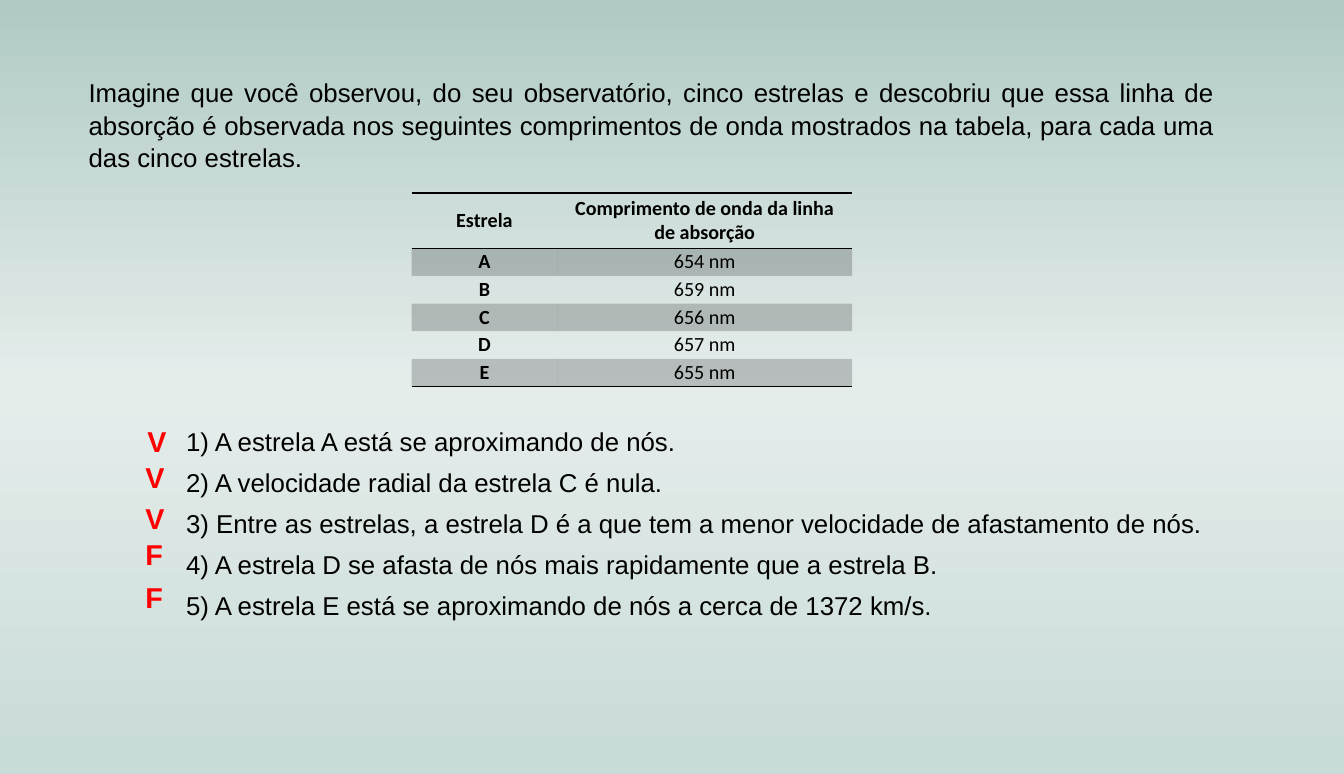
from copy import deepcopy

from lxml.etree import SubElement
from pptx import Presentation
from pptx.dml.color import RGBColor
from pptx.enum.text import MSO_ANCHOR, PP_ALIGN
from pptx.oxml import parse_xml
from pptx.oxml.ns import nsdecls, qn
from pptx.util import Cm, Pt

BLACK = RGBColor(0x00, 0x00, 0x00)
RED = RGBColor(0xFF, 0x00, 0x00)
GRADIENT = [
    (0, RGBColor(0xB0, 0xCA, 0xC4)),
    (0.5, RGBColor(0xE5, 0xED, 0xEB)),
    (0.98, RGBColor(0xCA, 0xDC, 0xD8)),
]
NO_TABLE_STYLE = "{2D5ABB26-0587-4C30-8999-92F81FD0307C}"

INTRO = (
    "Imagine que você observou, do seu observatório, cinco estrelas e descobriu "
    "que essa linha de absorção é observada nos seguintes comprimentos de onda "
    "mostrados na tabela, para cada uma das cinco estrelas."
)
WAVELENGTHS = [
    ("Estrela", "Comprimento de onda da linha de absorção"),
    ("A", "654 nm"),
    ("B", "659 nm"),
    ("C", "656 nm"),
    ("D", "657 nm"),
    ("E", "655 nm"),
]
STATEMENTS = [
    "1) A estrela A está se aproximando de nós.",
    "2) A velocidade radial da estrela C é nula.",
    "3) Entre as estrelas, a estrela D é a que tem a menor velocidade de afastamento de nós.",
    "4) A estrela D se afasta de nós mais rapidamente que a estrela B.",
    "5) A estrela E está se aproximando de nós a cerca de 1372 km/s.",
]
# Letter, then its offset in cm from the corner of the statements box
ANSWERS = [("V", 0.05, 0), ("V", 0, 0.89), ("V", 0, 1.88), ("F", 0, 2.79), ("F", 0, 3.84)]


def format_run(paragraph, size, font_name, color=BLACK, bold=False):
    font = paragraph.runs[0].font
    font.size, font.name, font.bold = Pt(size), font_name, bold
    font.color.rgb = color


def paint_background(slide):
    fill = slide.background.fill
    fill.gradient()
    fill.gradient_angle = 270
    stop_list = slide.element.find(".//" + qn("a:gsLst"))
    stop_list.append(deepcopy(stop_list[0]))
    for stop, (position, color) in zip(fill.gradient_stops, GRADIENT):
        stop.position = position
        stop.color.rgb = color


def add_body_text(slide, left, top, width, height, lines, indent=0):
    shape = slide.shapes.add_textbox(Cm(left), Cm(top), Cm(width), Cm(height))
    text_frame = shape.text_frame
    text_frame.word_wrap = True
    text_frame.text = "\n".join(lines)
    for paragraph in text_frame.paragraphs:
        properties = paragraph._p.get_or_add_pPr()
        properties.set("marL", str(Cm(indent)))
        properties.set("indent", "0")
        paragraph.alignment = PP_ALIGN.JUSTIFY
        paragraph.line_spacing = 1.05
        paragraph.space_after = Pt(6)
        format_run(paragraph, 18, "Arial")


def add_border(cell, tag):
    line = parse_xml(
        f'<a:{tag} {nsdecls("a")} w="12700"><a:solidFill>'
        f'<a:srgbClr val="{BLACK}"/></a:solidFill></a:{tag}>'
    )
    cell._tc.get_or_add_tcPr().insert(0, line)


def fill_cell(cell, shaded):
    if not shaded:
        cell.fill.background()
        return
    cell.fill.solid()
    cell.fill.fore_color.rgb = BLACK
    color = cell._tc.tcPr.find(".//" + qn("a:srgbClr"))
    SubElement(color, qn("a:alpha")).set("val", "20000")


def add_wavelength_table(slide, left, top, column_widths, header_height, row_height):
    last = len(WAVELENGTHS) - 1
    frame = slide.shapes.add_table(
        len(WAVELENGTHS), len(column_widths), Cm(left), Cm(top),
        Cm(sum(column_widths)), Cm(header_height + last * row_height),
    )
    table = frame.table
    table.first_row = table.horz_banding = False
    frame.element.find(".//" + qn("a:tableStyleId")).text = NO_TABLE_STYLE
    for column, width in zip(table.columns, column_widths):
        column.width = Cm(width)

    for row_index, values in enumerate(WAVELENGTHS):
        table.rows[row_index].height = Cm(row_height if row_index else header_height)
        for column_index, value in enumerate(values):
            cell = table.cell(row_index, column_index)
            cell.text = value
            cell.vertical_anchor = MSO_ANCHOR.MIDDLE
            cell.margin_left = cell.margin_right = Cm(0.19)
            cell.margin_top = cell.margin_bottom = 0
            paragraph = cell.text_frame.paragraphs[0]
            paragraph.alignment = PP_ALIGN.CENTER
            bold = row_index == 0 or column_index == 0
            format_run(paragraph, 14, "Calibri", bold=bold)
            fill_cell(cell, shaded=row_index % 2 == 1)
            if row_index in (0, last):
                add_border(cell, "lnB")
            if row_index == 0:
                add_border(cell, "lnT")


def add_answers(slide, left, top):
    for letter, offset_x, offset_y in ANSWERS:
        shape = slide.shapes.add_textbox(
            Cm(left + offset_x), Cm(top + offset_y), Cm(0.98), Cm(1.11)
        )
        shape.text_frame.word_wrap = False
        shape.text_frame.text = letter
        format_run(shape.text_frame.paragraphs[0], 20, "Arial", RED, bold=True)


def build_question_slide(presentation):
    slide = presentation.slides.add_slide(presentation.slide_layouts[6])
    paint_background(slide)
    # Introduction and table of measurements
    add_body_text(slide, 1.93, 1.73, 28.19, 2.57, [INTRO])
    add_wavelength_table(slide, 10.13, 4.75, (3.58, 7.26), 1.36, 0.68)
    # Statements with their true/false marks
    left, top = 3.33, 10.31
    add_body_text(slide, left, top, 27.41, 4.95, STATEMENTS, indent=1)
    add_answers(slide, left, top)


def main():
    presentation = Presentation()
    presentation.slide_width = Cm(33.07)
    presentation.slide_height = Cm(19.05)
    build_question_slide(presentation)
    presentation.save("out.pptx")


if __name__ == "__main__":
    main()
